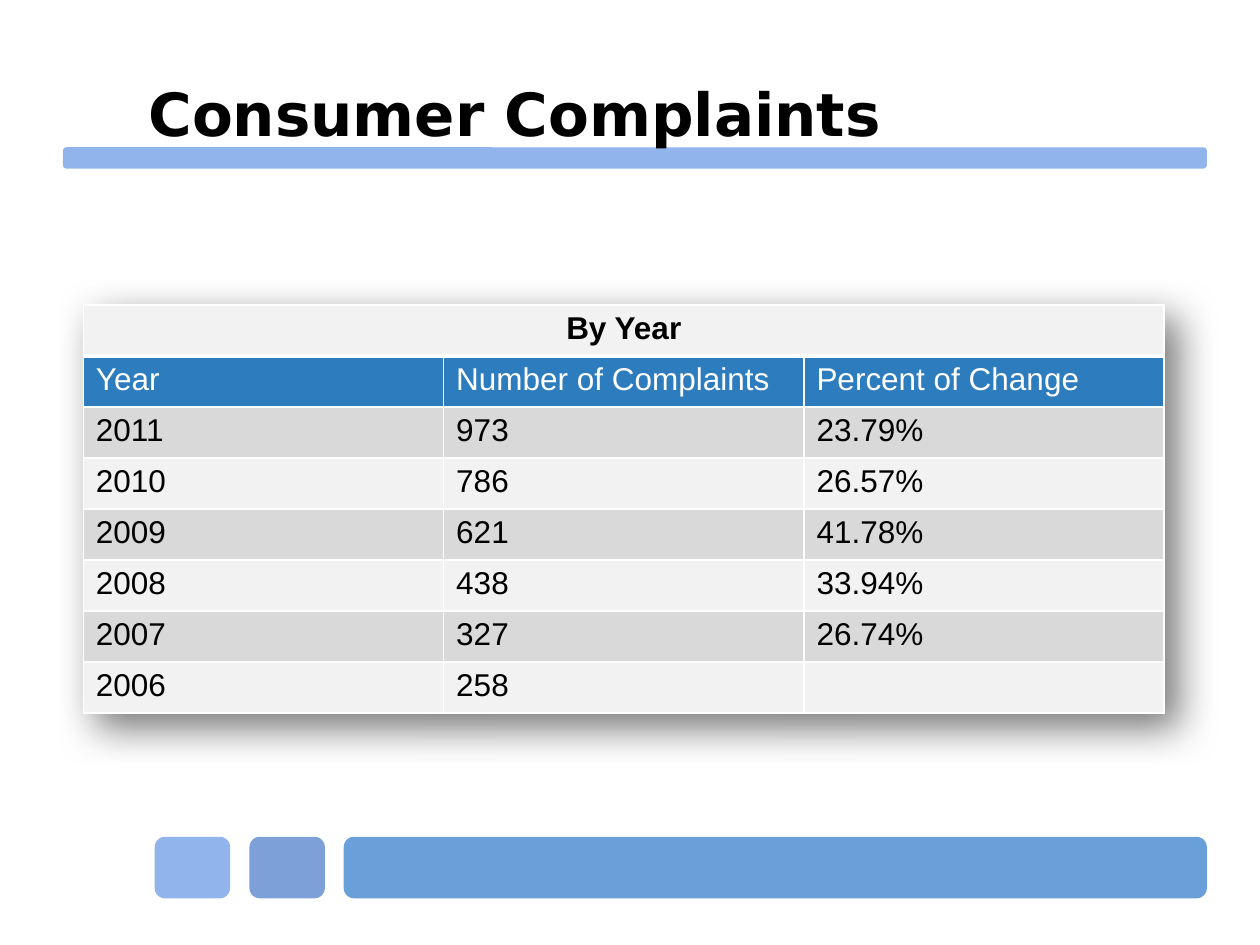
from dataclasses import dataclass

from lxml import etree
from pptx import Presentation
from pptx.dml.color import RGBColor as Color
from pptx.enum.shapes import MSO_SHAPE as Preset
from pptx.enum.text import MSO_ANCHOR as Anchor, PP_ALIGN as Align
from pptx.oxml.ns import qn
from pptx.util import Cm, Pt


@dataclass(frozen=True)
class Theme:
    title_font: str = "DejaVu Sans"
    table_font: str = "Arial"
    title_size: int = 34
    table_size: int = 18
    black: str = "000000"
    white: str = "FFFFFF"
    header: str = "2D7CBD"
    dark_band: str = "D9D9D9"
    light_band: str = "F2F2F2"
    pale_blue: str = "91B4ED"
    mid_blue: str = "7DA0D9"
    strong_blue: str = "69A0D9"
    shadow: str = "333333"


THEME = Theme()

# left, top, width, height in centimetres, then colour
BARS = [
    (3.12, 16.87, 1.52, 1.24, THEME.pale_blue),
    (5.03, 16.87, 1.52, 1.24, THEME.mid_blue),
    (6.93, 16.87, 17.4, 1.24, THEME.strong_blue),
    (1.27, 2.97, 23.06, 0.43, THEME.pale_blue),
]

COMPLAINTS = [
    ("By Year", "", ""),
    ("Year", "Number of Complaints", "Percent of Change"),
    ("2011", "973", "23.79%"),
    ("2010", "786", "26.57%"),
    ("2009", "621", "41.78%"),
    ("2008", "438", "33.94%"),
    ("2007", "327", "26.74%"),
    ("2006", "258", ""),
]


def add_run(paragraph, text, font_name, size, color, bold=False):
    run = paragraph.add_run()
    run.text = text
    run.font.name = font_name
    run.font.size = Pt(size)
    run.font.bold = bold
    run.font.color.rgb = Color.from_string(color)


def add_bar(slide, left, top, width, height, color):
    bar = slide.shapes.add_shape(
        Preset.FLOWCHART_ALTERNATE_PROCESS, Cm(left), Cm(top), Cm(width), Cm(height)
    )
    bar.shadow.inherit = False
    bar.fill.solid()
    bar.fill.fore_color.rgb = Color.from_string(color)
    bar.line.fill.background()


def format_title(slide, text):
    """Place the title in front of the bars, which its descenders overlap."""
    title = slide.shapes.title
    title.left, title.top, title.width, title.height = Cm(2.74), Cm(0.84), Cm(21.79), Cm(2.54)
    frame = title.text_frame
    frame.word_wrap = True
    frame.vertical_anchor = Anchor.MIDDLE
    paragraph = frame.paragraphs[0]
    paragraph.alignment = Align.LEFT
    paragraph.line_spacing = Pt(50)
    add_run(paragraph, text, THEME.title_font, THEME.title_size, THEME.black, bold=True)
    slide.shapes.element.append(title.element)


def add_solid_color(parent, color):
    fill = etree.SubElement(parent, qn("a:solidFill"))
    etree.SubElement(fill, qn("a:srgbClr"), val=color)


def set_borders(cell, top=1, bottom=1):
    properties = cell._tc.get_or_add_tcPr()
    for tag, width in (("lnL", 1), ("lnR", 1), ("lnT", top), ("lnB", bottom)):
        line = etree.SubElement(properties, qn(f"a:{tag}"), w=str(Pt(width)))
        add_solid_color(line, THEME.white)


def add_table_shadow(table):
    effects = etree.SubElement(table._tbl.tblPr, qn("a:effectLst"))
    # The effect list comes before the table style in the schema.
    table._tbl.tblPr.insert(0, effects)
    shadow = etree.SubElement(
        effects, qn("a:outerShdw"), blurRad="292100", dist="139700",
        dir="2700000", algn="tl", rotWithShape="0",
    )
    color = etree.SubElement(shadow, qn("a:srgbClr"), val=THEME.shadow)
    etree.SubElement(color, qn("a:alpha"), val="65000")


def row_fill(row):
    if row == 1:
        return THEME.header
    return THEME.light_band if row % 2 or row == 0 else THEME.dark_band


def add_complaints_table(slide, rows):
    columns = len(rows[0])
    table = slide.shapes.add_table(
        len(rows), columns, Cm(1.68), Cm(6.15), Cm(21.79), Cm(8.23)
    ).table
    table.first_row = table.horz_banding = False
    add_table_shadow(table)
    table.cell(0, 0).merge(table.cell(0, columns - 1))
    for row, texts in enumerate(rows):
        for column, text in enumerate(texts):
            cell = table.cell(row, column)
            set_borders(cell, top=3 if row == 1 else 1, bottom=3 if row == 0 else 1)
            cell.fill.solid()
            cell.fill.fore_color.rgb = Color.from_string(row_fill(row))
            if not text:
                continue
            paragraph = cell.text_frame.paragraphs[0]
            paragraph.alignment = Align.CENTER if row == 0 else Align.LEFT
            color = THEME.white if row == 1 else THEME.black
            add_run(paragraph, text, THEME.table_font, THEME.table_size, color, bold=row == 0)


def main():
    presentation = Presentation()
    presentation.slide_width, presentation.slide_height = Cm(25.4), Cm(19.05)
    slide = presentation.slides.add_slide(presentation.slide_layouts.get_by_name("Title Only"))
    for bar in BARS:
        add_bar(slide, *bar)
    add_complaints_table(slide, COMPLAINTS)
    format_title(slide, "Consumer Complaints")
    presentation.save("out.pptx")


if __name__ == "__main__":
    main()
